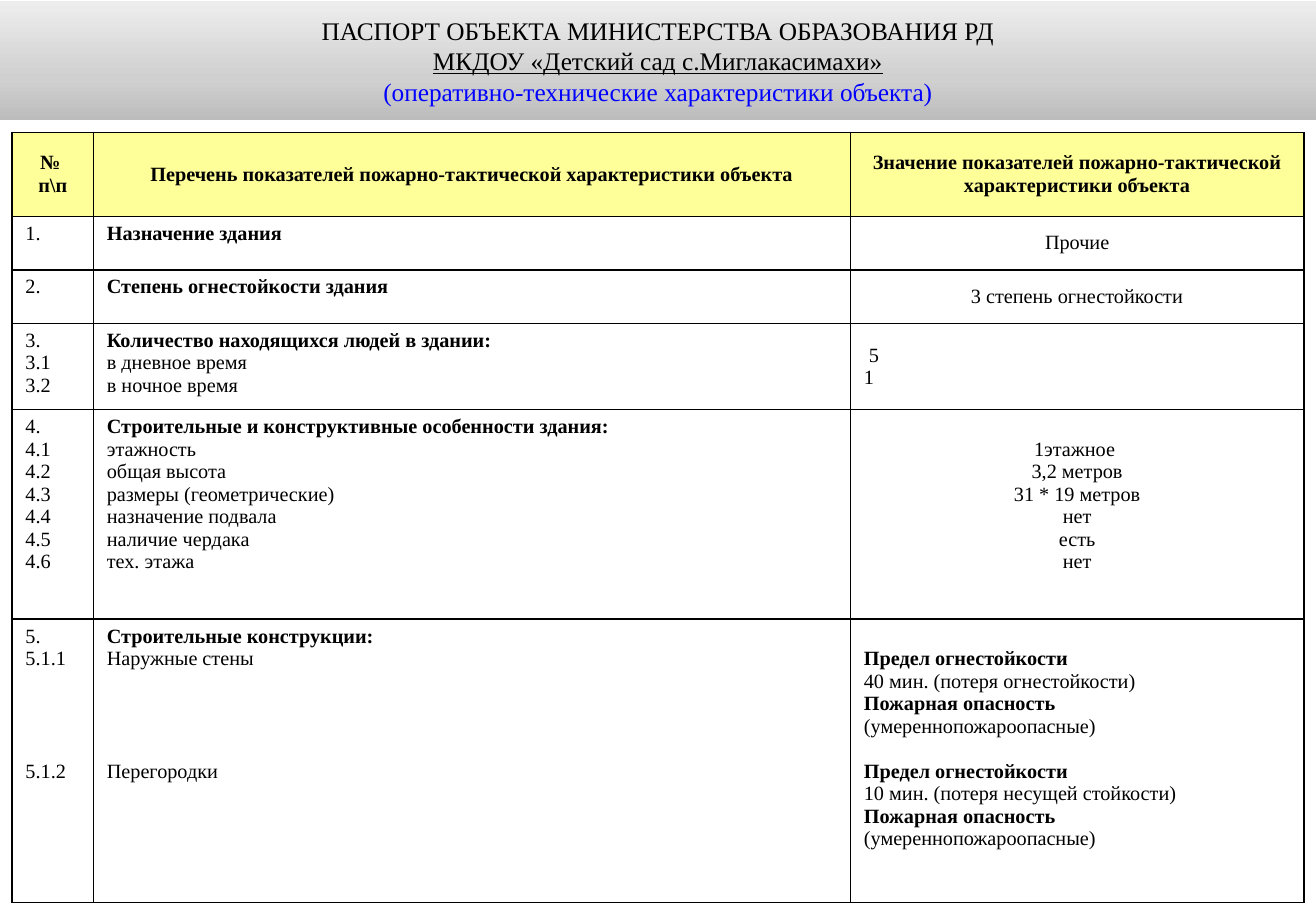
from dataclasses import dataclass

from lxml.etree import SubElement
from pptx import Presentation
from pptx.dml.color import RGBColor
from pptx.enum.text import MSO_ANCHOR as Anchor, MSO_AUTO_SIZE as AutoSize, PP_ALIGN as Align
from pptx.oxml.ns import qn
from pptx.util import Inches, Pt


@dataclass(frozen=True)
class Theme:
    font: str = "Times New Roman"
    title_size: float = 15
    body_size: float = 12
    line: float = 13.4  # height of one table text line, points
    text: str = "000000"
    accent: str = "0000FF"
    border: str = "000000"
    head_fill: str = "FFFF99"
    cell_fill: str = "FFFFFF"
    banner: tuple = ((0, "BCBCBC"), (35, "D0D0D0"), (100, "EDEDED"))


@dataclass(frozen=True)
class Line:
    text: str
    bold: bool = False
    gap: int = 0  # free lines above


@dataclass(frozen=True)
class Entry:
    lines: tuple
    align: Align = Align.LEFT
    anchor: Anchor = Anchor.TOP


THEME = Theme()


def plain(*texts):
    return tuple(Line(t) for t in texts)


def headed(heading, *texts):
    return (Line(heading, bold=True),) + plain(*texts)


def header(*texts):
    return Entry(tuple(Line(t, bold=True) for t in texts), Align.CENTER, Anchor.MIDDLE)


def limits(resistance):
    """Lines on fire resistance and fire hazard, one free line above."""
    return (
        Line("Предел огнестойкости", bold=True, gap=1),
        Line(resistance),
        Line("Пожарная опасность", bold=True),
        Line("(умереннопожароопасные)"),
    )


TITLE = (
    ("ПАСПОРТ ОБЪЕКТА МИНИСТЕРСТВА ОБРАЗОВАНИЯ РД", THEME.text, False),
    ("МКДОУ «Детский сад с.Миглакасимахи»", THEME.text, True),
    ("(оперативно-технические характеристики объекта)", THEME.accent, False),
)
COLS = (0.67, 6.23, 3.73)
ROWS = (
    (0.69, header("№ ", "п\\п"),
     header("Перечень показателей пожарно-тактической характеристики объекта"),
     header("Значение показателей пожарно-тактической характеристики объекта")),
    (0.44, Entry(plain("1.")), Entry(headed("Назначение здания")),
     Entry(plain("Прочие"), Align.CENTER, Anchor.MIDDLE)),
    (0.44, Entry(plain("2.")), Entry(headed("Степень огнестойкости здания")),
     Entry(plain("3 степень огнестойкости"), Align.CENTER, Anchor.MIDDLE)),
    (0.71, Entry(plain("3.", "3.1", "3.2")),
     Entry(headed("Количество находящихся людей в здании:",
                  "в дневное время", "в ночное время")),
     Entry(plain(" 5", "1"), anchor=Anchor.MIDDLE)),
    (1.72, Entry(plain("4.", "4.1", "4.2", "4.3", "4.4", "4.5", "4.6")),
     Entry(headed("Строительные и конструктивные особенности здания:",
                  "этажность", "общая высота", "размеры (геометрические)",
                  "назначение подвала", "наличие чердака", "тех. этажа")),
     Entry((Line("1этажное ", gap=1),)
           + plain("3,2 метров", "31 * 19 метров", "нет", "есть", "нет"), Align.CENTER)),
    (2.33, Entry(plain("5.", "5.1.1") + (Line("5.1.2", gap=4),)),
     Entry(headed("Строительные конструкции:", "Наружные стены")
           + (Line("Перегородки", gap=4),)),
     Entry(limits("40 мин. (потеря огнестойкости)")
           + limits("10 мин. (потеря несущей стойкости)"))),
)


def add_run(p, text, size, color, bold=False, underline=False):
    r = p.add_run()
    r.text = text
    f = r.font
    f.name, f.size, f.bold, f.underline = THEME.font, Pt(size), bold, underline
    f.color.rgb = RGBColor.from_string(color)


def paragraph(tf, index):
    return tf.add_paragraph() if index else tf.paragraphs[0]


def fill_gradient(sp, stops):
    """Fill from bottom to top with any number of colour stops."""
    sp.fill.gradient()
    sp.fill.gradient_angle = 90
    gs_list = sp._element.spPr.find(qn("a:gradFill")).find(qn("a:gsLst"))
    for gs in list(gs_list):
        gs_list.remove(gs)
    for percent, color in stops:
        gs = SubElement(gs_list, qn("a:gs"), pos=str(percent * 1000))
        SubElement(gs, qn("a:srgbClr"), val=color)


def add_banner(s, left, top, width, height):
    sp = s.shapes.title
    sp.left, sp.top, sp.width, sp.height = map(Inches, (left, top, width, height))
    fill_gradient(sp, THEME.banner)
    tf = sp.text_frame
    tf.word_wrap, tf.auto_size = True, AutoSize.NONE
    tf.vertical_anchor = Anchor.MIDDLE
    tf.margin_left = tf.margin_right = Inches(0.09)
    tf.margin_top = tf.margin_bottom = Inches(0.05)
    for i, (text, color, underline) in enumerate(TITLE):
        p = paragraph(tf, i)
        p.alignment = Align.CENTER
        add_run(p, text, THEME.title_size, color, underline=underline)


def add_borders(cell):
    tc_pr = cell._tc.get_or_add_tcPr()
    for i, side in enumerate(("a:lnL", "a:lnR", "a:lnT", "a:lnB")):
        ln = tc_pr.makeelement(qn(side), {"w": str(Pt(1))})
        fill = SubElement(ln, qn("a:solidFill"))
        SubElement(fill, qn("a:srgbClr"), val=THEME.border)
        tc_pr.insert(i, ln)


def fill_cell(cell, entry, color):
    cell.fill.solid()
    cell.fill.fore_color.rgb = RGBColor.from_string(color)
    add_borders(cell)
    cell.vertical_anchor = entry.anchor
    cell.margin_left = cell.margin_right = Inches(0.11)
    cell.margin_bottom = Inches(0.05)
    cell.margin_top = Inches(0.05) + Pt(entry.lines[0].gap * THEME.line)
    for i, line in enumerate(entry.lines):
        p = paragraph(cell.text_frame, i)
        p.alignment = entry.align
        if i and line.gap:
            p.space_before = Pt(line.gap * THEME.line)
        add_run(p, line.text, THEME.body_size, THEME.text, line.bold)


def add_passport_table(s, left, top, width, height):
    box = map(Inches, (left, top, width, height))
    table = s.shapes.add_table(len(ROWS), len(COLS), *box).table
    table.horz_banding = False
    for col, share in zip(table.columns, COLS):
        col.width = Inches(width * share / sum(COLS))
    total = sum(row[0] for row in ROWS)
    for i, (share, *entries) in enumerate(ROWS):
        table.rows[i].height = Inches(height * share / total)
        color = THEME.cell_fill if i else THEME.head_fill
        for j, entry in enumerate(entries):
            fill_cell(table.cell(i, j), entry, color)


def main():
    prs = Presentation()
    prs.slide_width, prs.slide_height = Inches(10.83), Inches(7.5)
    s = prs.slides.add_slide(prs.slide_layouts[5])
    add_banner(s, 0, 0.01, 10.83, 0.98)
    add_passport_table(s, 0.1, 1.09, 10.63, 6.34)
    prs.save("out.pptx")


if __name__ == "__main__":
    main()
